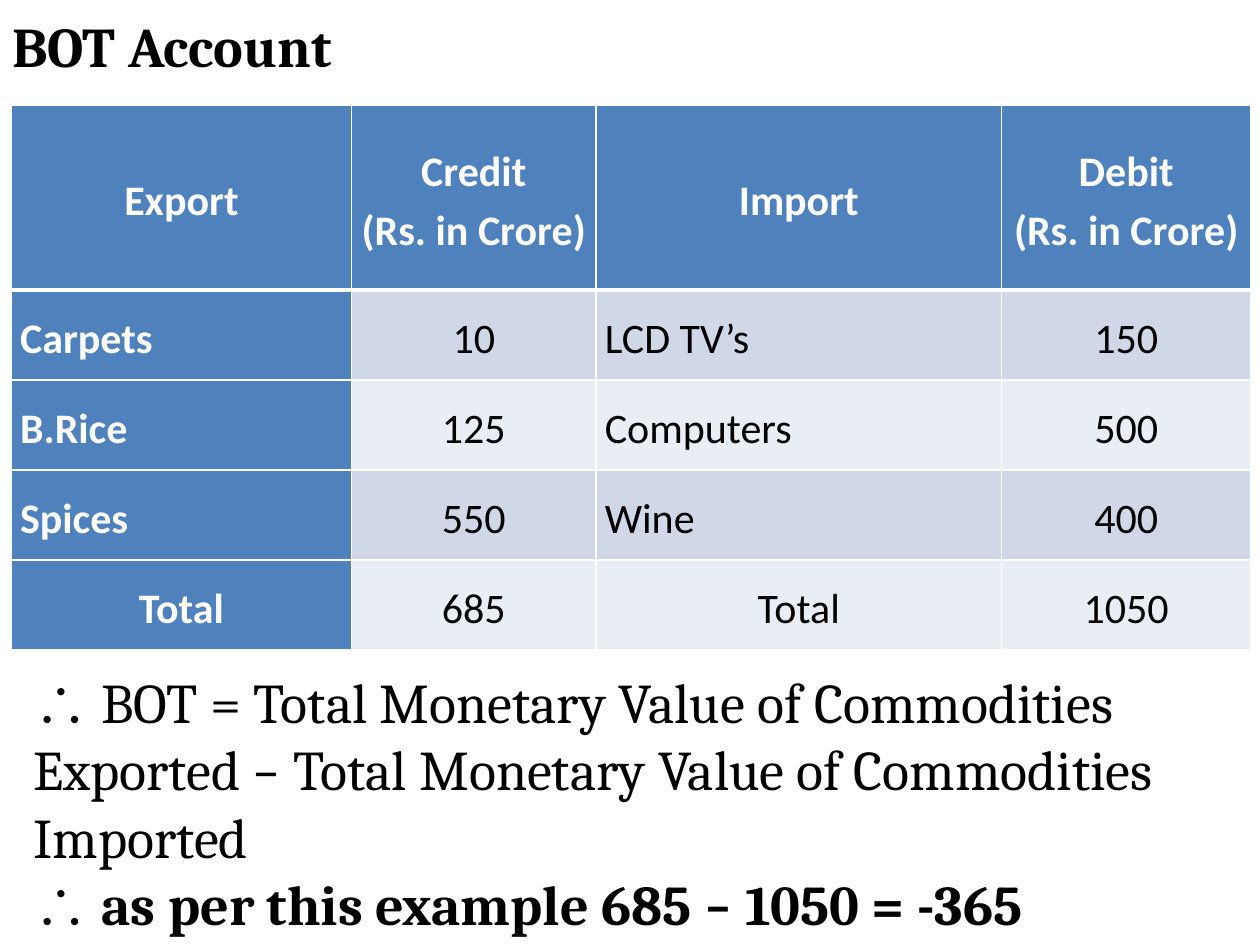
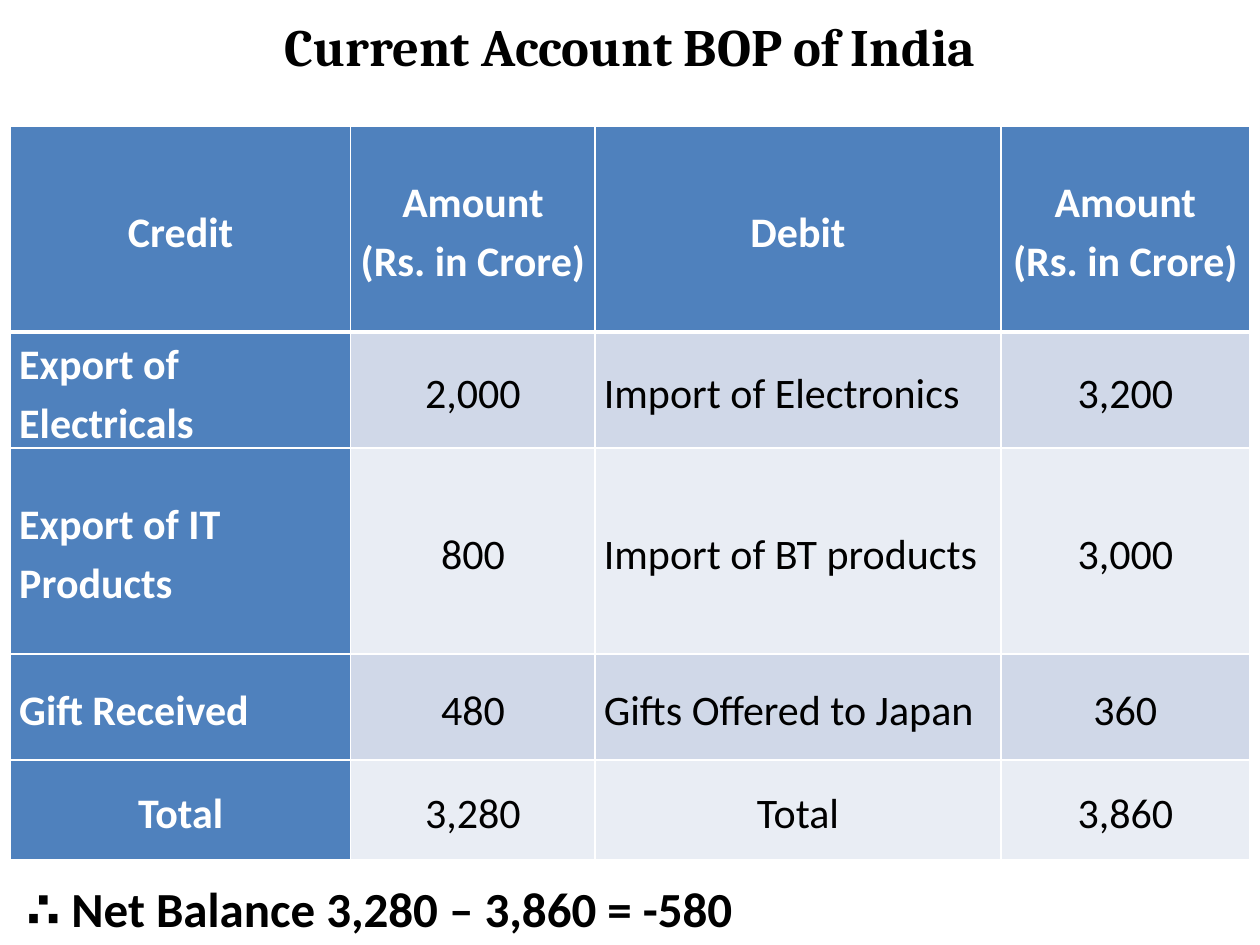
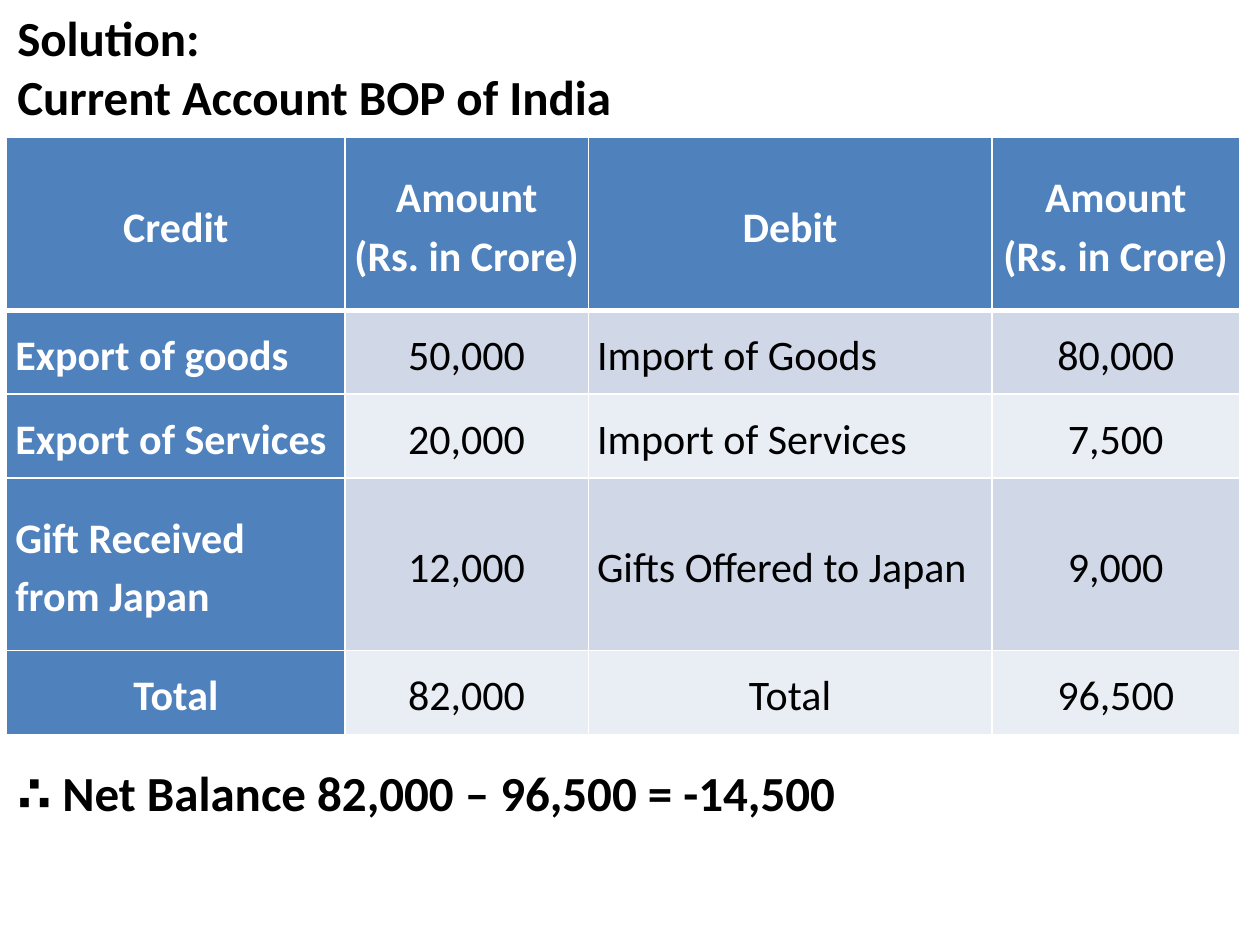
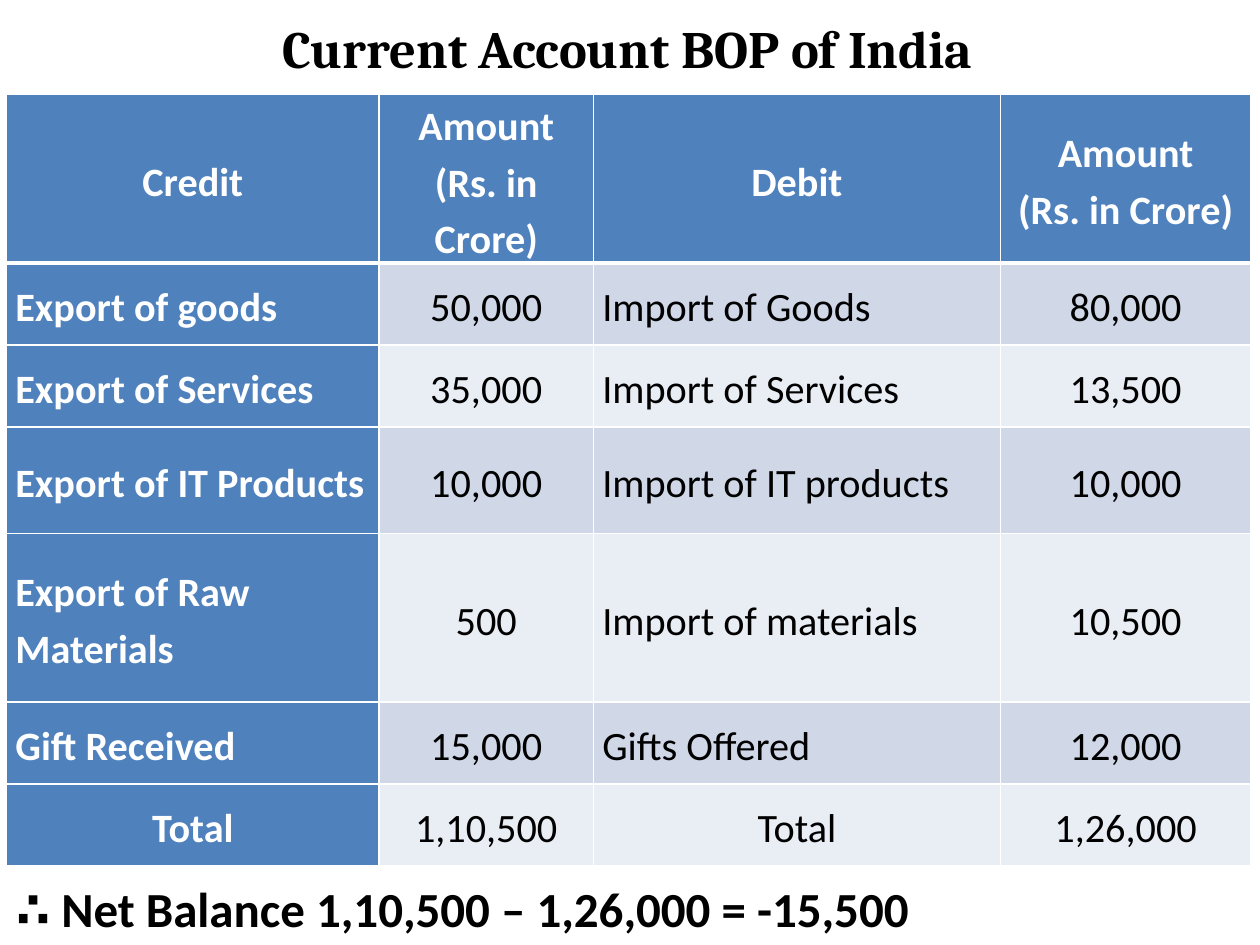
"""Build four slides of trade and current account balance tables."""
import pptx
import pptx.dml.color
import pptx.enum.text
import pptx.oxml
import pptx.oxml.ns
import pptx.util

Pt = pptx.util.Pt
ALIGN = pptx.enum.text.PP_ALIGN
ANCHOR = pptx.enum.text.MSO_ANCHOR
COLORS = {"header": "4F81BD", "odd": "D0D8E8", "even": "E9EDF4",
          "light": "FFFFFF", "dark": "000000"}
UNIT = "(Rs. in Crore)"
AMOUNT = "Amount\n" + UNIT
BOP_HEADER = ["Credit", AMOUNT, "Debit", AMOUNT]
BOP_TITLE = "Current Account BOP of India"
WIDE_COLUMNS = [194.4, 139.7, 231.8, 142.4]


def add_span(para, text, font, size, bold, color="dark"):
    span = para.add_run()
    span.text = text
    span.font.name = font
    span.font.size = Pt(size)
    span.font.bold = bold
    span.font.color.rgb = pptx.dml.color.RGBColor.from_string(COLORS[color])


def add_text(page, place, paragraphs, size, align=ALIGN.LEFT, anchor=ANCHOR.TOP):
    box = page.shapes.add_textbox(*[Pt(length) for length in place])
    frame = box.text_frame
    frame.word_wrap = True
    frame.auto_size = pptx.enum.text.MSO_AUTO_SIZE.SHAPE_TO_FIT_TEXT
    frame.vertical_anchor = anchor
    for index, spans in enumerate(paragraphs):
        para = frame.paragraphs[0] if index == 0 else frame.add_paragraph()
        para.alignment = align
        for text, font, bold in spans:
            add_span(para, text, font, size, bold)


accounts = [
    {
        "title": ([[("BOT Account", "Cambria", True)]], (0, 2.9, 708, 46), 32, ALIGN.LEFT, ANCHOR.MIDDLE),
        "result": ([[("∴ BOT = Total Monetary Value of Commodities Exported ", "Cambria", False),
                     ("–", "Calibri", False),
                     (" Total Monetary Value of Commodities Imported", "Cambria", False)],
                    [("∴ ", "Cambria", False),
                     ("as per this example 685 ", "Cambria", True),
                     ("–", "Calibri", True),
                     (" 1050 = -365", "Cambria", True)]], (12, 378, 696, 162.7), 32),
        "corner": (6.5, 60), "columns": WIDE_COLUMNS, "size": 24,
        "heights": [105.8, 51.4, 51.4, 51.4, 51.4],
        "rows": [["Export", "Credit\n" + UNIT, "Import", "Debit\n" + UNIT],
                 ["Carpets", "10", "LCD TV’s", "150"],
                 ["B.Rice", "125", "Computers", "500"],
                 ["Spices", "550", "Wine", "400"],
                 ["Total", "685", "Total", "1050"]],
    },
    {
        "title": ([[(BOP_TITLE, "Cambria", True)]], (6, 4.3, 708, 44), 30, ALIGN.CENTER, ANCHOR.MIDDLE),
        "result": ([[("∴ Net Balance 3,280 – 3,860 = -580", "Calibri", True)]], (8, 498.4, 694, 41), 28),
        "corner": (6, 72), "columns": WIDE_COLUMNS, "size": 24,
        "heights": [117.8, 60.6, 117.8, 60.6, 57],
        "rows": [BOP_HEADER,
                 ["Export of Electricals", "2,000", "Import of Electronics", "3,200"],
                 ["Export of IT Products", "800", "Import of BT products", "3,000"],
                 ["Gift Received", "480", "Gifts Offered to Japan", "360"],
                 ["Total", "3,280", "Total", "3,860"]],
    },
    {
        "title": ([[("Solution:", "Calibri", True)], [(BOP_TITLE, "Calibri", True)]],
                  (2.8, 0.8, 717, 75), 28),
        "result": ([[("∴ Net Balance 82,000 – 96,500 = -14,500", "Calibri", True)]], (2.8, 432, 699, 41), 28),
        "corner": (3.8, 78.7), "columns": [193.4, 139, 230.6, 141.6], "size": 24,
        "heights": [98.6, 48, 48, 98.6, 48],
        "rows": [BOP_HEADER,
                 ["Export of goods", "50,000", "Import of Goods", "80,000"],
                 ["Export of Services", "20,000", "Import of Services", "7,500"],
                 ["Gift Received from Japan", "12,000", "Gifts Offered to Japan", "9,000"],
                 ["Total", "82,000", "Total", "96,500"]],
    },
    {
        "title": ([[(BOP_TITLE, "Cambria", True)]], (141.8, 5, 433.4, 44), 30, ALIGN.CENTER, ANCHOR.MIDDLE),
        "result": ([[("∴ Net Balance 1,10,500 – 1,26,000 = -15,500", "Calibri", True)]],
                   (2.2, 498.4, 717.8, 41), 28),
        "corner": (3.8, 54), "columns": [212.9, 122.5, 232.5, 143.3], "size": 23,
        "heights": [96.3, 46.8, 46.8, 61, 96.3, 46.8, 46.8],
        "rows": [BOP_HEADER,
                 ["Export of goods", "50,000", "Import of Goods", "80,000"],
                 ["Export of Services", "35,000", "Import of Services", "13,500"],
                 ["Export of IT Products", "10,000", "Import of IT products", "10,000"],
                 ["Export of Raw Materials", "500", "Import of materials", "10,500"],
                 ["Gift Received", "15,000", "Gifts Offered", "12,000"],
                 ["Total", "1,10,500", "Total", "1,26,000"]],
    },
]

deck = pptx.Presentation()
deck.slide_width = Pt(720)
deck.slide_height = Pt(540)

for account in accounts:
    page = deck.slides.add_slide(deck.slide_layouts[6])
    rows, columns, heights = account["rows"], account["columns"], account["heights"]
    place = [*account["corner"], sum(columns), sum(heights)]
    table = page.shapes.add_table(len(rows), len(columns), *[Pt(length) for length in place]).table
    table.first_col = True
    for column, width in zip(table.columns, columns):
        column.width = Pt(width)
    for row, height in zip(table.rows, heights):
        row.height = Pt(height)

    for row_index, labels in enumerate(rows):
        for column_index, label in enumerate(labels):
            cell = table.cell(row_index, column_index)
            cell.margin_left = cell.margin_right = Pt(5)
            cell.margin_top = cell.margin_bottom = 0
            cell.vertical_anchor = ANCHOR.MIDDLE

            properties = cell._tc.get_or_add_tcPr()
            for side in ("L", "R", "T", "B"):
                below_header = (row_index, side) in ((0, "B"), (1, "T"))
                properties.append(pptx.oxml.parse_xml(
                    f'<a:ln{side} {pptx.oxml.ns.nsdecls("a")} w="{Pt(3 if below_header else 1)}">'
                    f'<a:solidFill><a:srgbClr val="{COLORS["light"]}"/></a:solidFill></a:ln{side}>'))

            heading = row_index == 0 or column_index == 0
            shade = "header" if heading else "odd" if row_index % 2 else "even"
            cell.fill.solid()
            cell.fill.fore_color.rgb = pptx.dml.color.RGBColor.from_string(COLORS[shade])

            left = column_index % 2 == 0 and 0 < row_index < len(rows) - 1
            for line_index, line in enumerate(label.split("\n")):
                frame = cell.text_frame
                para = frame.paragraphs[0] if line_index == 0 else frame.add_paragraph()
                para.alignment = ALIGN.LEFT if left else ALIGN.CENTER
                para.line_spacing = 1.15
                add_span(para, line, "Calibri", account["size"], heading, "light" if heading else "dark")

    for key in ("title", "result"):
        paragraphs, place, *style = account[key]
        add_text(page, place, paragraphs, *style)

deck.save("out.pptx")
